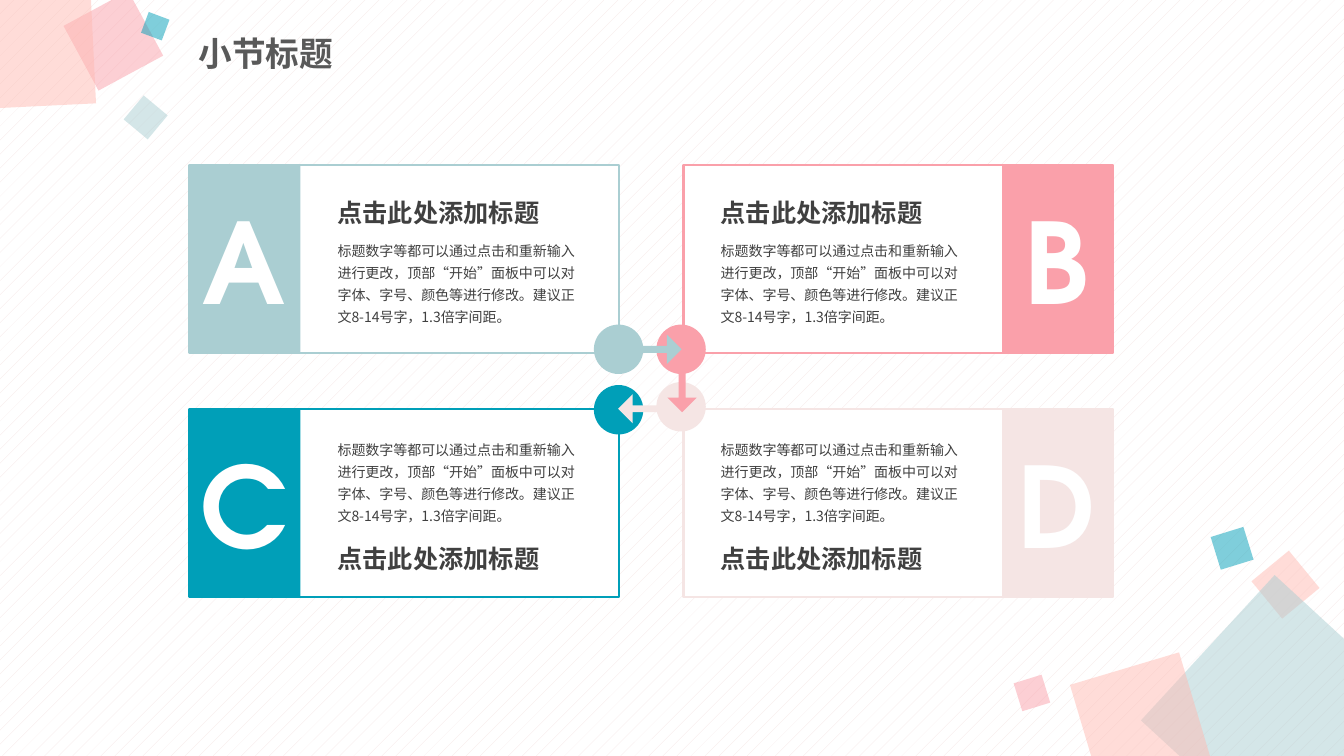
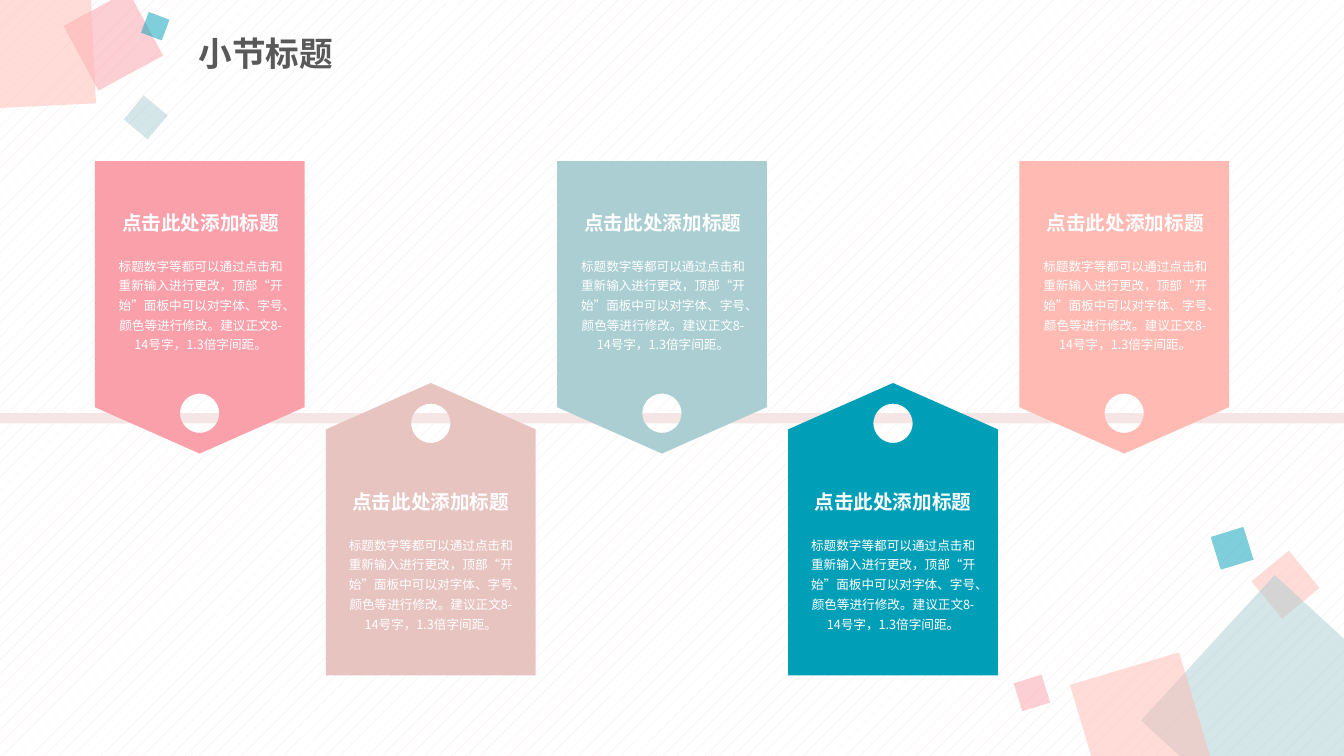
from lxml import etree
from pptx import Presentation
from pptx.dml.color import RGBColor
from pptx.enum import dml, shapes, text
from pptx.oxml.ns import qn
from pptx.util import Inches, Pt

COLORS = {
    "pink": "FAA0AA", "peach": "FFBBB3", "mist": "AACED2", "teal": "009FB8",
    "blush": "F5E5E4", "rose": "E8C4C1", "white": "FFFFFF",
    "title": "595959", "body": "404040",
}
SANS, DISPLAY = "Noto Sans CJK SC", "TeX Gyre Adventor"
SECTION = "小节标题"
HEADING = "点击此处添加标题"
BODY = ("标题数字等都可以通过点击和重新输入进行更改，顶部“开始”面板中可以对字体、"
        "字号、颜色等进行修改。建议正文8-14号字，1.3倍字间距。")

# left, top, side, rotation, colour
CONFETTI = [
    (12.51, 5.56, 0.48, 320.6, "peach"),
    (11.72, 6.11, 1.96, 42.6, "mist"),
    (10.75, 6.61, 1.13, 343.4, "peach"),
    (10.09, 6.73, 0.29, 342.8, "pink"),
    (12.05, 5.27, 0.34, 342.8, "teal"),
    (0.76, 0.04, 0.73, 331.6, "pink"),
    (-0.46, -0.32, 1.38, 357.2, "peach"),
    (1.29, 1.01, 0.31, 309.8, "mist"),
    (1.43, 0.15, 0.22, 290.5, "teal"),
]

CARD_W, CARD_H, PANEL_W, DOT = 4.26, 1.86, 1.1, 0.49
# letter, colour, left, top, dot left, dot top
CARDS = [
    ("A", "mist", 1.88, 1.64, 5.89, 3.22),
    ("B", "pink", 6.78, 1.64, 6.51, 3.22),
    ("C", "teal", 1.88, 4.06, 5.89, 3.82),
    ("D", "blush", 6.78, 4.06, 6.51, 3.79),
]
# left, top, rotation, colour
ARROWS = [
    (6.29, 3.32, 0, "mist"),
    (6.53, 3.71, 90, "pink"),
    (6.13, 3.91, 180, "blush"),
]

TAG_COLORS = ["pink", "rose", "mist", "teal", "peach"]
FIRST_TAG, LAST_TAG, TAG_W, TAG_H = 0.94, 10.11, 2.08, 2.9
SHOULDER, HOLE_DEPTH, HOLE = 0.46, 0.4, 0.39
CIRCLE_HANDLE = 0.55  # Bezier handle length of a quarter circle, in radii


def rgb(name):
    return RGBColor.from_string(COLORS[name])


def style(sp, fill, line=None):
    sp.shadow.inherit = False
    sp.fill.solid()
    sp.fill.fore_color.rgb = rgb(fill)
    if line:
        sp.line.color.rgb = rgb(line)
        sp.line.width = Pt(1.5)
    else:
        sp.line.fill.background()


def add_shape(s, kind, x, y, w, h, fill, line=None, rotation=0):
    sp = s.shapes.add_shape(kind, Inches(x), Inches(y), Inches(w), Inches(h))
    style(sp, fill, line)
    sp.rotation = rotation
    return sp


def write(tf, content, size, font, color, bold=False, align=text.PP_ALIGN.LEFT, spacing=1.3):
    p = tf.paragraphs[0]
    p.text = content
    p.alignment, p.line_spacing = align, spacing
    p.font.size, p.font.name, p.font.bold = Pt(size), font, bold
    p.font.color.rgb = rgb(color)
    etree.SubElement(p._p.pPr.find(qn("a:defRPr")), qn("a:ea"), typeface=SANS)
    return p


def add_text(s, x, y, w, h, *args, **kwargs):
    tf = s.shapes.add_textbox(Inches(x), Inches(y), Inches(w), Inches(h)).text_frame
    tf.word_wrap = True
    write(tf, *args, **kwargs)
    return tf


def add_titled_slide(prs):
    s = prs.slides.add_slide(prs.slide_layouts[5])
    sp = s.shapes.title
    sp.left, sp.top, sp.width, sp.height = map(Inches, (1.87, 0.26, 6.13, 0.58))
    tf = sp.text_frame
    tf.vertical_anchor = text.MSO_ANCHOR.MIDDLE
    tf.auto_size = text.MSO_AUTO_SIZE.NONE
    p = write(tf, SECTION, 24, SANS, "title", bold=True, spacing=0.9)
    p.space_before = Pt(10)
    return s


def decorate_layout(prs, s):
    """Set the shared background and move the corner squares, built on s, to its layout."""
    fill = prs.slide_master.background.fill
    fill.patterned()
    fill.pattern = dml.MSO_PATTERN.PERCENT_5
    fill.fore_color.rgb = rgb("blush")
    fill.back_color.rgb = rgb("white")
    for i, (x, y, side, rotation, color) in enumerate(CONFETTI):
        sp = add_shape(s, shapes.MSO_SHAPE.RECTANGLE, x, y, side, side, color, rotation=rotation)
        color_el = sp.element.spPr.find(qn("a:solidFill"))[0]
        etree.SubElement(color_el, qn("a:alpha"), val="50000")
        sp.element.nvSpPr.cNvPr.set("id", str(100 + i))
        s.slide_layout.shapes.element.append(sp.element)


def add_card(s, letter, color, x, y, dot_x, dot_y):
    rect = shapes.MSO_SHAPE.RECTANGLE
    on_left, on_top = letter in "AC", letter in "AB"
    add_shape(s, rect, x, y, CARD_W, CARD_H, "white", line=color)
    panel_x = x if on_left else x + CARD_W - PANEL_W
    add_shape(s, rect, panel_x, y, PANEL_W, CARD_H, color)
    text_x = x + (1.37 if on_left else 0.27)
    body_y, heading_y = (0.67, 0.18) if on_top else (0.22, 1.19)
    add_text(s, text_x, y + body_y, 2.6, 0.98, BODY, 10, SANS, "body")
    add_text(s, text_x, y + heading_y, 2.6, 0.49, HEADING, 18, DISPLAY, "body", bold=True)
    add_shape(s, shapes.MSO_SHAPE.OVAL, dot_x, dot_y, DOT, DOT, color)
    tf = add_text(s, panel_x - 0.01, y + 0.21, PANEL_W, 1.45, letter, 80, DISPLAY, "white",
                  bold=True, align=text.PP_ALIGN.CENTER, spacing=1)
    tf.word_wrap = False
    tf.vertical_anchor = text.MSO_ANCHOR.MIDDLE


def cut_hole(sp, cx, cy, r):
    """Add a round contour, centred at cx, cy within the freeform sp."""
    outline = next(sp.element.iter(qn("a:path")))

    def add_segment(name, *points):
        segment = etree.SubElement(outline, qn(name))
        for dx, dy in points:
            etree.SubElement(segment, qn("a:pt"), x=str(Inches(cx + r * dx)),
                             y=str(Inches(cy + r * dy)))

    k = CIRCLE_HANDLE
    add_segment("a:moveTo", (0, -1))
    for ux, uy in ((0, -1), (1, 0), (0, 1), (-1, 0)):
        vx, vy = -uy, ux
        add_segment("a:cubicBezTo", (ux + k * vx, uy + k * vy),
                    (vx + k * ux, vy + k * uy), (vx, vy))
    add_segment("a:close")


def add_tag(s, x, y, color, points_down):
    """Draw a pointed tag with a round hole near its tip, and its texts."""
    def from_tip(depth):
        return TAG_H - depth if points_down else depth

    mid = TAG_W / 2
    corners = ((mid, 0), (TAG_W, SHOULDER), (TAG_W, TAG_H), (0, TAG_H), (0, SHOULDER))
    outline = [(Inches(x + dx), Inches(y + from_tip(depth))) for dx, depth in corners]
    builder = s.shapes.build_freeform(*outline[0])
    builder.add_line_segments(outline[1:])
    sp = builder.convert_to_shape()
    style(sp, color)
    cut_hole(sp, mid, from_tip(HOLE_DEPTH), HOLE / 2)

    text_x = x + (0.11 if points_down else 0.1)
    heading_y = y + (0.37 if points_down else 0.94)
    center = text.PP_ALIGN.CENTER
    add_text(s, text_x, heading_y + 0.5, 1.88, 1.09, BODY, 9, SANS, "white", align=center)
    add_text(s, text_x, heading_y, 1.88, 0.41, HEADING, 14, DISPLAY, "white",
             bold=True, align=center)


def build_cards(s):
    for card in CARDS:
        add_card(s, *card)
    for x, y, rotation, color in ARROWS:
        arrow = add_shape(s, shapes.MSO_SHAPE.RIGHT_ARROW, x, y, 0.47, 0.29, color,
                          rotation=rotation)
        arrow.adjustments[0] = 0.24


def build_timeline(s):
    add_shape(s, shapes.MSO_SHAPE.RECTANGLE, 0, 4.1, 13.33, 0.1, "blush")
    pitch = (LAST_TAG - FIRST_TAG) / (len(TAG_COLORS) - 1)
    for i, color in enumerate(TAG_COLORS):
        points_down = i % 2 == 0
        add_tag(s, FIRST_TAG + i * pitch, 1.6 if points_down else 3.8, color, points_down)


def main():
    prs = Presentation()
    prs.slide_width, prs.slide_height = Inches(13.33), Inches(7.5)
    cards = add_titled_slide(prs)
    decorate_layout(prs, cards)
    build_cards(cards)
    build_timeline(add_titled_slide(prs))
    prs.save("out.pptx")


if __name__ == "__main__":
    main()
